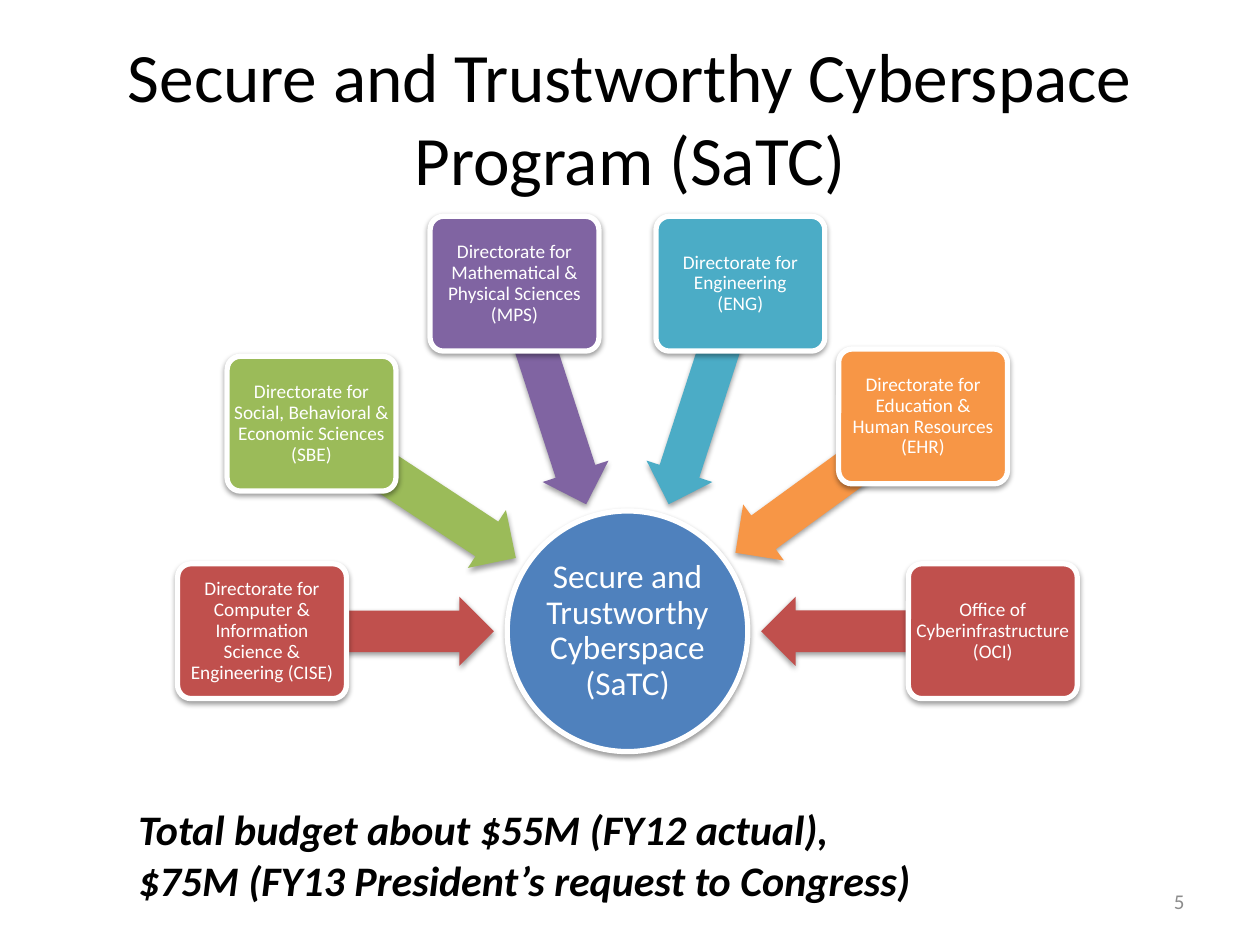
from copy import deepcopy
from math import cos, radians, sin

from lxml.etree import SubElement
from pptx import Presentation
from pptx.dml.color import RGBColor
from pptx.enum.shapes import MSO_SHAPE
from pptx.enum.text import MSO_ANCHOR, MSO_AUTO_SIZE, PP_ALIGN
from pptx.oxml.ns import qn
from pptx.util import Inches, Pt


def write(shape, text, size, color="FFFFFF", align=PP_ALIGN.CENTER, inset=None,
          anchor=MSO_ANCHOR.MIDDLE, spacing=None, wrap=True, bold=False, italic=False):
    """Fill a shape with text: a newline starts a paragraph, \\v a line break."""
    frame = shape.text_frame
    frame.text = text
    frame.auto_size = MSO_AUTO_SIZE.NONE
    frame.word_wrap = wrap
    frame.vertical_anchor = anchor
    if inset is not None:
        frame.margin_left = frame.margin_right = Inches(inset)
        frame.margin_top = frame.margin_bottom = Inches(inset)
    for para in frame.paragraphs:
        para.alignment = align
        para.line_spacing = spacing
        for span in para.runs:
            span.font.name = "Calibri"
            span.font.size = Pt(size)
            span.font.bold = bold
            span.font.italic = italic
            span.font.color.rgb = RGBColor.from_string(color)
        # Line breaks take the size of the text around them
        for line_break in para._p.findall(qn("a:br")):
            line_break.insert(0, deepcopy(para.runs[0]._r.rPr))


def add_part(kind, center_x, center_y, width, height, color, outlined=True):
    """Add a filled shape around a centre point, with a soft shadow below."""
    part = slide.shapes.add_shape(
        kind, Inches(center_x - width / 2), Inches(center_y - height / 2),
        Inches(width), Inches(height))
    part.fill.solid()
    part.fill.fore_color.rgb = RGBColor.from_string(color)
    if outlined:
        part.line.color.rgb = RGBColor.from_string("FFFFFF")
        part.line.width = Pt(3)
    else:
        part.line.fill.background()
    part.shadow.inherit = False
    effects = part._element.spPr.find(qn("a:effectLst"))
    shadow = SubElement(effects, qn("a:outerShdw"), blurRad="40000", dist="20000",
                        dir="5400000", rotWithShape="0")
    shade = SubElement(shadow, qn("a:srgbClr"), val="000000")
    SubElement(shade, qn("a:alpha"), val="38000")
    return part


deck = Presentation()
deck.slide_width, deck.slide_height = Inches(10), Inches(7.5)
slide = deck.slides.add_slide(deck.slide_layouts[5])

# Title
title = slide.shapes.title
title.left, title.top = Inches(0.5), Inches(0.3)
title.width, title.height = Inches(9), Inches(1.25)
write(title, "Secure and Trustworthy Cyberspace Program (SaTC)", 39.6, color="000000")

# Hub of the diagram
HUB_X, HUB_Y = 4.98, 5.01
ARROW_START = 1.06  # distance from hub centre to arrow tip
hub = add_part(MSO_SHAPE.OVAL, HUB_X, HUB_Y, 1.91, 1.91, "4F81BD")
write(hub, "Secure and Trustworthy Cyberspace (SaTC)", 19, inset=0.01, spacing=0.9)

# Directorates: angle around the hub, arrow length, colour, name
directorates = [
    (180, 1.84, "C0504D",
     "Directorate for Computer & Information Science & Engineering (CISE)"),
    (213.3, 1.94, "9BBB59",
     "Directorate for Social, Behavioral & Economic Sciences (SBE)"),
    (252, 1.84, "8064A2", "Directorate for Mathematical & Physical Sciences (MPS)"),
    (288, 1.84, "4BACC6", "Directorate for Engineering\v(ENG)"),
    (324, 1.84, "F79646", "Directorate for Education & Human Resources\v(EHR)"),
    (360, 1.84, "C0504D", "Office of Cyberinfrastructure (OCI)"),
]
for angle, length, color, name in directorates:
    across, down = cos(radians(angle)), sin(radians(angle))
    middle, end = ARROW_START + length / 2, ARROW_START + length

    arrow = add_part(MSO_SHAPE.LEFT_ARROW, HUB_X + middle * across,
                     HUB_Y + middle * down, length, 0.55, color, outlined=False)
    arrow.rotation = angle % 360
    arrow.adjustments[0], arrow.adjustments[1] = 0.6, 0.5

    # Each box is centred on the outer end of its arrow
    box = add_part(MSO_SHAPE.ROUNDED_RECTANGLE, HUB_X + end * across,
                   HUB_Y + end * down, 1.34, 1.07, color)
    box.adjustments[0] = 0.1
    write(box, name, 11, inset=0.02, spacing=0.9)

# Budget note
budget = slide.shapes.add_textbox(Inches(1), Inches(6.33), Inches(6.47), Inches(0.91))
write(budget, "Total budget about $55M (FY12 actual),\n"
      "$75M (FY13 President’s request to Congress)", 24, color="000000",
      align=PP_ALIGN.LEFT, anchor=MSO_ANCHOR.TOP, wrap=False, bold=True, italic=True)

# Slide number
number = slide.shapes.add_textbox(Inches(7.17), Inches(6.95), Inches(2.33), Inches(0.4))
write(number, "5", 12, color="8C8C8C", align=PP_ALIGN.RIGHT)

deck.save("out.pptx")
